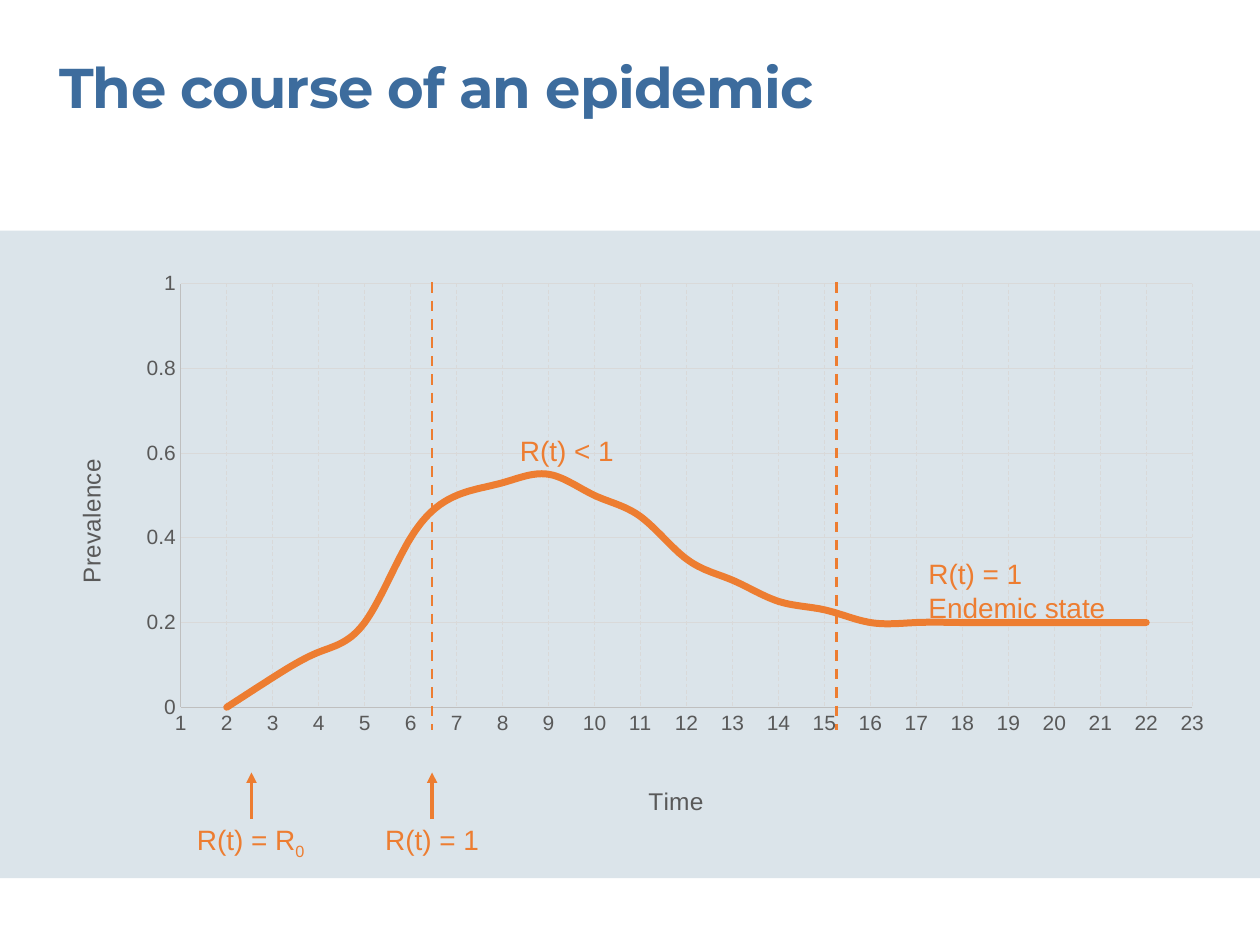
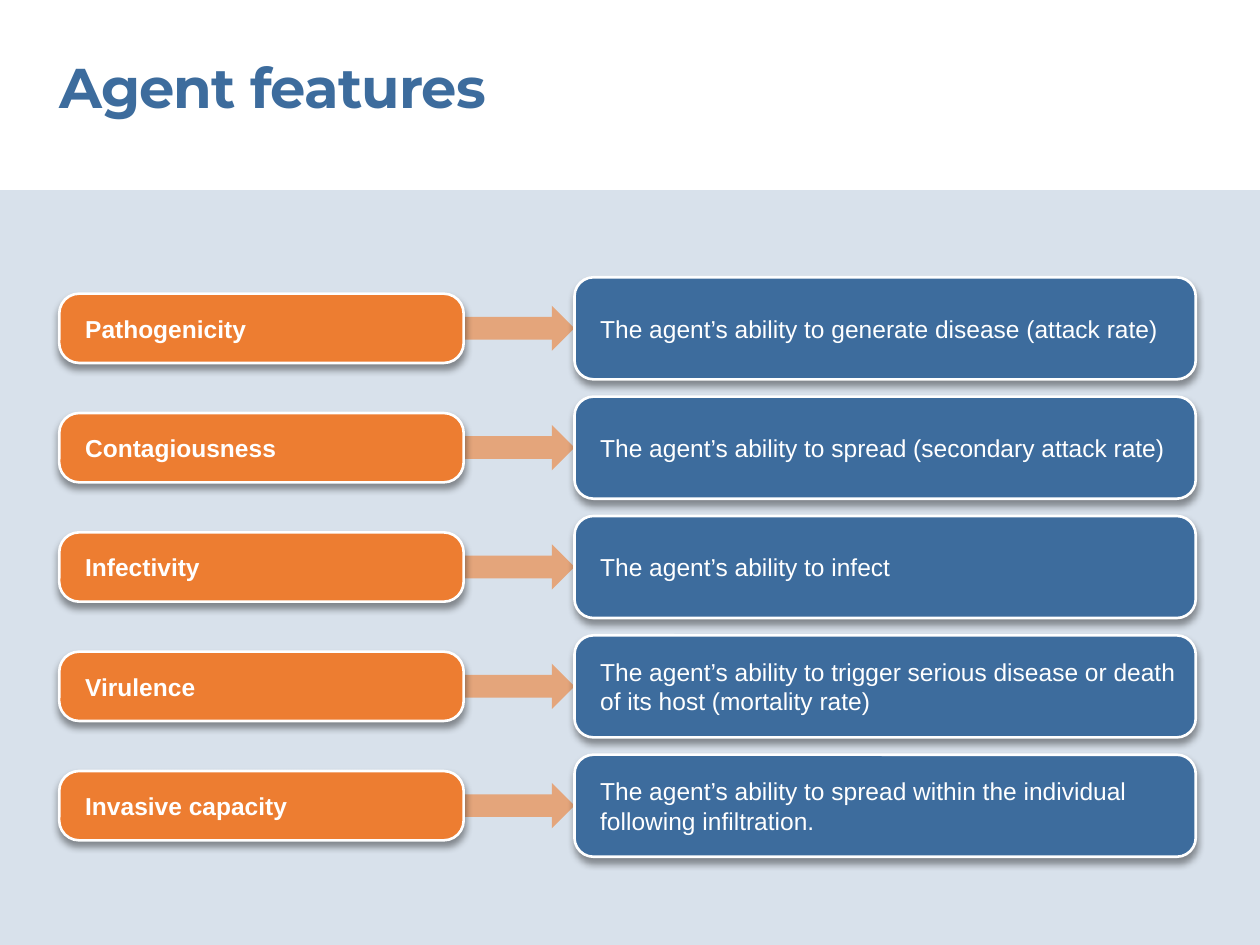
from dataclasses import dataclass

from lxml.etree import SubElement
from pptx import Presentation
from pptx.chart.data import XyChartData
from pptx.dml.color import RGBColor
from pptx.enum.chart import XL_CHART_TYPE as ChartType, XL_TICK_MARK as TickMark
from pptx.enum.dml import MSO_LINE_DASH_STYLE as Dash
from pptx.enum.shapes import MSO_CONNECTOR as Connector, MSO_SHAPE as Preset
from pptx.enum.text import MSO_ANCHOR as Anchor, MSO_AUTO_SIZE as AutoSize, PP_ALIGN as Align
from pptx.oxml import parse_xml
from pptx.oxml.ns import nsdecls, qn
from pptx.util import Pt

BLUE, ORANGE, WHITE = "3D6C9D", "ED7D31", "FFFFFF"
PALE, AXIS_TEXT, AXIS_LINE, GRID = "DBE4EA", "595959", "BFBFBF", "D9D9D9"
BODY_FONT, TITLE_FONT = "Arial", "Montserrat"
SLIDE_WIDTH, SLIDE_HEIGHT = 720, 540
LEFT = 33.84

SHADOW_XML = (
    f'<a:outerShdw {nsdecls("a")} blurRad="{Pt(4)}" dist="{Pt(3)}" dir="5400000" '
    'algn="t" rotWithShape="0"><a:srgbClr val="000000"><a:alpha val="40000"/>'
    "</a:srgbClr></a:outerShdw>"
)


@dataclass(frozen=True)
class Box:
    left: float
    top: float
    width: float
    height: float

    def lengths(self):
        return Pt(self.left), Pt(self.top), Pt(self.width), Pt(self.height)


@dataclass(frozen=True)
class Label:
    box: Box
    lines: tuple[str, ...]
    align: Align = Align.CENTER
    subscript: str = ""


@dataclass(frozen=True)
class Marker:
    x: float
    start: float
    end: float
    width: float
    dashed: bool = False


@dataclass(frozen=True)
class Column:
    """One column of rounded boxes on the agent slide."""
    left: float
    width: float
    height: float
    color: str
    rounding: float
    bold: bool


@dataclass(frozen=True)
class Feature:
    name: str
    meaning: str


PREVALENCE = (0, 0.07, 0.13, 0.2, 0.4, 0.5, 0.53, 0.55, 0.5, 0.45, 0.35,
              0.3, 0.25, 0.23) + (0.2,) * 7
FIRST_TIME = 2

LABEL_WIDTH, LABEL_HEIGHT = 74.88, 19.3
PEAK_X, ENDEMIC_X, START_X = 246.9, 478.1, 143.7
PHASE_LABELS = (
    Label(Box(105.8, 470.2, LABEL_WIDTH, LABEL_HEIGHT), ("R(t) = R",), subscript="0"),
    Label(Box(209.5, 470.2, LABEL_WIDTH, LABEL_HEIGHT), ("R(t) = 1",)),
    Label(Box(286.5, 247.7, LABEL_WIDTH, LABEL_HEIGHT), ("R(t) < 1",)),
    Label(Box(530.6, 318.2, 127.4, 38.9), ("R(t) = 1", "Endemic state"), Align.LEFT),
)
PHASE_MARKERS = (
    Marker(PEAK_X, 161.3, 416.9, 1.5, dashed=True),
    Marker(ENDEMIC_X, 161.3, 416.9, 1.5, dashed=True),
    Marker(START_X, 468, 441.4, 2),
    Marker(PEAK_X, 468, 441.4, 2),
)

NAMES = Column(LEFT, 231.1, 39.6, ORANGE, 0.287, True)
MEANINGS = Column(328.3, 355, 58.3, BLUE, 0.186, False)
ARROW_HEIGHT = 25.9
FIRST_ROW_CENTER, ROW_PITCH = 187.6, 68.2
FEATURES = (
    Feature("Pathogenicity", "The agent’s ability to generate disease (attack rate)"),
    Feature("Contagiousness", "The agent’s ability to spread (secondary attack rate)"),
    Feature("Infectivity", "The agent’s ability to infect"),
    Feature("Virulence", "The agent’s ability to trigger serious disease or death "
                         "of its host (mortality rate)"),
    Feature("Invasive capacity", "The agent’s ability to spread within the individual "
                                 "following infiltration."),
)


def rgb(color: str) -> RGBColor:
    return RGBColor.from_string(color)


def set_font(font, size: float, color: str, bold: bool = False, name: str = BODY_FONT):
    font.name, font.size, font.bold = name, Pt(size), bold
    font.color.rgb = rgb(color)


def set_line(line, color: str, width: float):
    line.color.rgb = rgb(color)
    line.width = Pt(width)


def set_insets(frame, left: float, top: float, right: float, bottom: float):
    frame.margin_left, frame.margin_top = Pt(left), Pt(top)
    frame.margin_right, frame.margin_bottom = Pt(right), Pt(bottom)


def add_title_slide(presentation, title: str):
    """Add a title-only slide with the shared title style."""
    slide = presentation.slides.add_slide(presentation.slide_layouts[5])
    shape = slide.shapes.title
    shape.left, shape.top, shape.width, shape.height = Box(LEFT, 30.24, 615.6, 38.9).lengths()
    frame = shape.text_frame
    frame.text = title
    frame.vertical_anchor = Anchor.TOP
    frame.auto_size = AutoSize.NONE
    set_insets(frame, 0, 0, 0, 0)
    paragraph = frame.paragraphs[0]
    paragraph.alignment = Align.LEFT
    set_font(paragraph.font, 32, BLUE, True, TITLE_FONT)
    paragraph.runs[0].font._element.set("spc", "-50")
    return slide


def add_filled(slide, preset: Preset, box: Box, color: str, opacity: int = 100):
    shape = slide.shapes.add_shape(preset, *box.lengths())
    shape.shadow.inherit = False
    shape.fill.solid()
    shape.fill.fore_color.rgb = rgb(color)
    shape.line.fill.background()
    if opacity < 100:
        color_element = shape._element.spPr.find(f'{qn("a:solidFill")}/{qn("a:srgbClr")}')
        SubElement(color_element, qn("a:alpha")).set("val", str(opacity * 1000))
    return shape


def add_label(slide, label: Label):
    frame = slide.shapes.add_textbox(*label.box.lengths()).text_frame
    frame.word_wrap = True
    frame.auto_size = AutoSize.SHAPE_TO_FIT_TEXT
    set_insets(frame, 0, 0, 0, 0)
    frame.text = "\n".join(label.lines)
    for paragraph in frame.paragraphs:
        paragraph.alignment = label.align
        set_font(paragraph.font, 16, ORANGE)
    if label.subscript:
        run = frame.paragraphs[0].add_run()
        run.text = label.subscript
        run.font._element.set("baseline", "-25000")


def add_marker(slide, marker: Marker):
    """Draw a dashed phase limit, or an arrow pointing at the time axis."""
    connector = slide.shapes.add_connector(
        Connector.STRAIGHT, Pt(marker.x), Pt(marker.start), Pt(marker.x), Pt(marker.end))
    set_line(connector.line, ORANGE, marker.width)
    properties = connector._element.spPr
    if marker.dashed:
        connector.line.dash_style = Dash.DASH
    else:
        SubElement(properties.find(qn("a:ln")), qn("a:tailEnd")).set("type", "triangle")
    SubElement(properties, qn("a:effectLst"))


def layout_xml(x: float, y: float, size: tuple[float, float] | None = None):
    """Manual chart layout, in fractions of the chart; size is for the plot only."""
    target = '<c:layoutTarget val="inner"/>' if size else ""
    extent = f'<c:w val="{size[0]}"/><c:h val="{size[1]}"/>' if size else ""
    return parse_xml(
        f'<c:layout {nsdecls("c")}><c:manualLayout>{target}<c:xMode val="edge"/>'
        f'<c:yMode val="edge"/><c:x val="{x}"/><c:y val="{y}"/>{extent}'
        "</c:manualLayout></c:layout>")


def replace_layout(parent, layout, after: str = ""):
    for old in parent.findall(qn("c:layout")):
        parent.remove(old)
    if after:
        parent.find(qn(after)).addnext(layout)
    else:
        parent.insert(0, layout)


def format_axis(axis, title: str, title_at: tuple[float, float],
                low: float, high: float, step: float):
    axis.minimum_scale, axis.maximum_scale, axis.major_unit = low, high, step
    axis.major_tick_mark = axis.minor_tick_mark = TickMark.NONE
    axis.has_major_gridlines = True
    set_line(axis.major_gridlines.format.line, GRID, 0.5)
    set_line(axis.format.line, AXIS_LINE, 0.75)
    set_font(axis.tick_labels.font, 12, AXIS_TEXT)
    axis.tick_labels.number_format = "General"
    axis.tick_labels.number_format_is_linked = False
    frame = axis.axis_title.text_frame
    frame.text = title
    set_font(frame.paragraphs[0].font, 14, AXIS_TEXT)
    replace_layout(axis.axis_title._element, layout_xml(*title_at), "c:tx")


def add_prevalence_chart(slide):
    data = XyChartData()
    points = data.add_series("Series 1")
    for time, value in enumerate(PREVALENCE, FIRST_TIME):
        points.add_data_point(time, value)
    chart = slide.shapes.add_chart(
        ChartType.XY_SCATTER_SMOOTH_NO_MARKERS,
        *Box(LEFT, 150.5, 668.2, 319.7).lengths(), data).chart
    chart.has_legend = chart.has_title = False
    set_font(chart.font, 10, "000000")
    format_axis(chart.category_axis, "Time", (0.5, 0.94), 1, 23, 1)
    chart.category_axis.major_gridlines.format.line.dash_style = Dash.DASH
    format_axis(chart.value_axis, "Prevalence", (0.01, 0.35), 0, 1, 0.2)
    plot = chart.plots[0]
    plot.vary_by_categories = False
    series = plot.series[0]
    set_line(series.format.line, ORANGE, 4)
    series._element.find(f'.//{qn("a:ln")}').set("cap", "rnd")
    series._element.find(qn("c:smooth")).set("val", "1")
    plot_area = chart._chartSpace.find(f'.//{qn("c:plotArea")}')
    replace_layout(plot_area, layout_xml(0.104, 0.037, (0.865, 0.769)))


def add_card(slide, column: Column, center: float, text: str):
    box = Box(column.left, center - column.height / 2, column.width, column.height)
    shape = add_filled(slide, Preset.ROUNDED_RECTANGLE, box, column.color)
    shape.adjustments[0] = column.rounding
    set_line(shape.line, WHITE, 1.5)
    shape._element.spPr.find(qn("a:effectLst")).append(parse_xml(SHADOW_XML))
    frame = shape.text_frame
    frame.word_wrap = True
    frame.vertical_anchor = Anchor.MIDDLE
    set_insets(frame, 11.5, 3.6, 7.2, 3.6)
    frame.text = text
    paragraph = frame.paragraphs[0]
    paragraph.alignment = Align.LEFT
    set_font(paragraph.font, 14, WHITE, column.bold)


def build_epidemic_slide(presentation):
    slide = add_title_slide(presentation, "The course of an epidemic")
    add_filled(slide, Preset.RECTANGLE, Box(0, 131.8, SLIDE_WIDTH, 370.1), PALE)
    add_prevalence_chart(slide)
    for marker in PHASE_MARKERS:
        add_marker(slide, marker)
    for label in PHASE_LABELS:
        add_label(slide, label)


def build_agent_slide(presentation):
    slide = add_title_slide(presentation, "Agent features")
    band_top = 108.7
    add_filled(slide, Preset.RECTANGLE,
               Box(0, band_top, SLIDE_WIDTH, SLIDE_HEIGHT - band_top), BLUE, 20)
    arrow_left = NAMES.left + NAMES.width
    for row, feature in enumerate(FEATURES):
        center = FIRST_ROW_CENTER + row * ROW_PITCH
        arrow = Box(arrow_left, center - ARROW_HEIGHT / 2,
                    MEANINGS.left - arrow_left, ARROW_HEIGHT)
        add_filled(slide, Preset.RIGHT_ARROW, arrow, ORANGE, 60)
        add_card(slide, MEANINGS, center, feature.meaning)
        add_card(slide, NAMES, center, feature.name)


def main():
    presentation = Presentation()
    presentation.slide_width, presentation.slide_height = Pt(SLIDE_WIDTH), Pt(SLIDE_HEIGHT)
    build_epidemic_slide(presentation)
    build_agent_slide(presentation)
    presentation.save("out.pptx")


if __name__ == "__main__":
    main()
